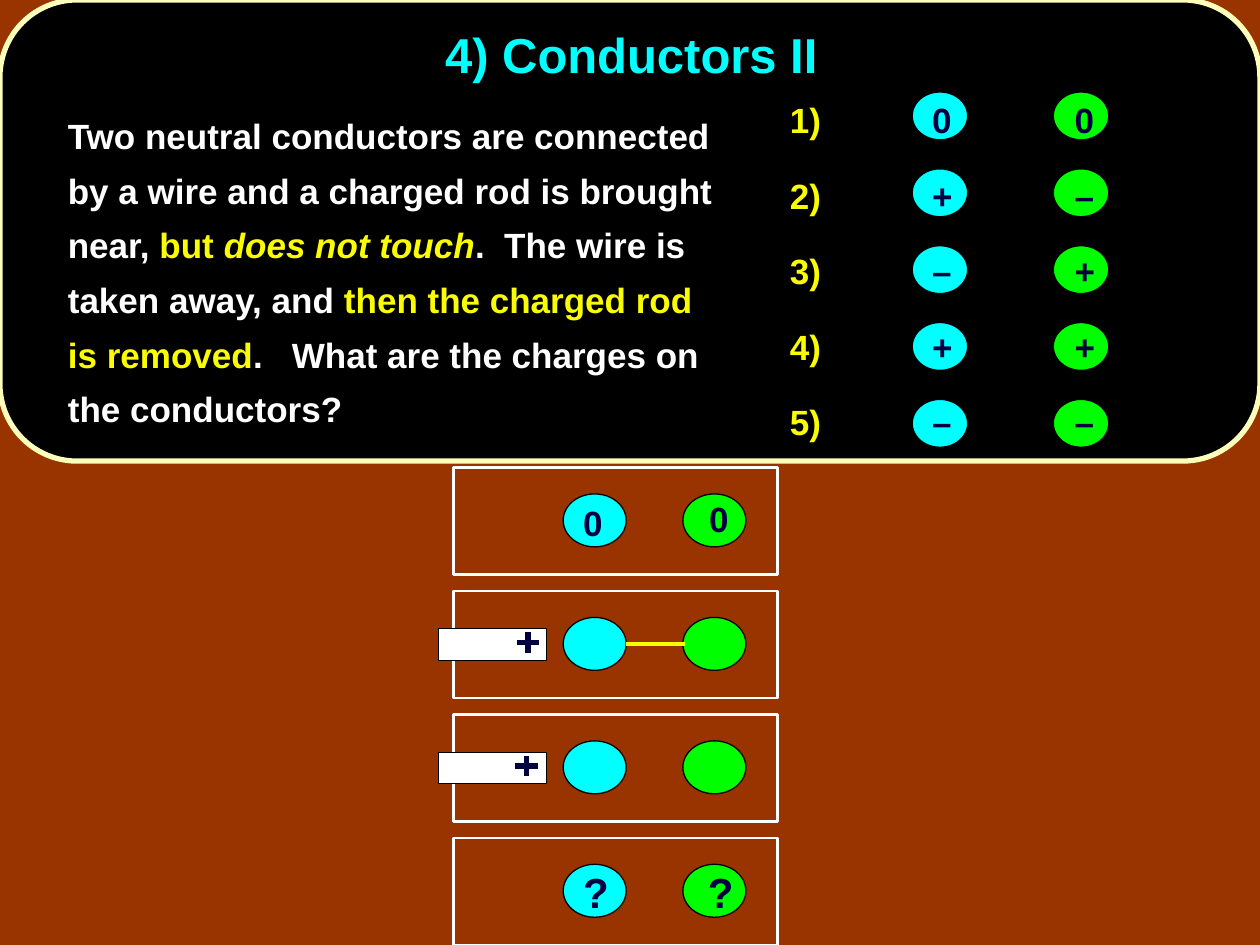
import pptx
import pptx.util
import pptx.dml.color
import pptx.enum.shapes
import pptx.enum.text
import pptx.oxml
from pptx.oxml.ns import qn
from lxml import etree

Inches = pptx.util.Inches
Pt = pptx.util.Pt
RGB = pptx.dml.color.RGBColor
SHAPE = pptx.enum.shapes.MSO_SHAPE
ALIGN = pptx.enum.text.PP_ALIGN
ANCHOR = pptx.enum.text.MSO_ANCHOR

BROWN = RGB(0x99, 0x33, 0x00)
BLACK = RGB(0x00, 0x00, 0x00)
WHITE = RGB(0xFF, 0xFF, 0xFF)
CREAM = RGB(0xFC, 0xFE, 0xB9)
YELLOW = RGB(0xFA, 0xFD, 0x00)
CYAN = RGB(0x00, 0xFF, 0xFF)
GREEN = RGB(0x00, 0xFF, 0x00)
NAVY = RGB(0x00, 0x00, 0x40)

TITLE = "4) Conductors II"
QUESTION = [
    ("Two neutral conductors are connected by a wire and a charged rod is brought near, ", WHITE, False),
    ("but ", YELLOW, False),
    ("does not touch", YELLOW, True),
    (".  The wire is taken away, and ", WHITE, False),
    ("then the charged rod is removed", YELLOW, False),
    (".   What are the charges on the conductors?", WHITE, False),
]
ANSWERS = [("0", "0"), ("+", "–"), ("–", "+"), ("+", "+"), ("–", "–")]
PANELS = 4
RODS = [(1, 4.19), (2, 4.18)]
LABELS = [
    ("0", 20, 4.53, 3.97, 0.36, 0.4),
    ("0", 20, 5.53, 3.94, 0.36, 0.4),
    ("?", 24, 4.53, 6.87, 0.4, 0.46),
    ("?", 24, 5.52, 6.87, 0.4, 0.46),
]

ANSWER_TOP, ANSWER_STEP = 0.73, 0.61
PANEL_TOP, PANEL_STEP = 3.71, 0.98


def add_shape(s, kind, x, y, w, h, fill, line, width):
    sp = s.shapes.add_shape(kind, Inches(x), Inches(y), Inches(w), Inches(h))
    sp.shadow.inherit = False
    if fill is None:
        sp.fill.background()
    else:
        sp.fill.solid()
        sp.fill.fore_color.rgb = fill
    sp.line.color.rgb = line
    sp.line.width = Pt(width)
    return sp


def add_pair(s, lefts, y, w, h):
    for x, color in zip(lefts, (CYAN, GREEN)):
        add_shape(s, SHAPE.OVAL, x, y, w, h, color, BLACK, 0.75)


def add_line(s, x1, y1, x2, y2, color, width):
    c = s.shapes.add_connector(pptx.enum.shapes.MSO_CONNECTOR.STRAIGHT,
                               Inches(x1), Inches(y1), Inches(x2), Inches(y2))
    c.line.color.rgb = color
    c.line.width = Pt(width)
    etree.SubElement(c._element.spPr, qn("a:effectLst"))


def add_text(s, x, y, w, h, wrap=False):
    tf = s.shapes.add_textbox(Inches(x), Inches(y), Inches(w), Inches(h)).text_frame
    tf.word_wrap = wrap
    return tf


def add_run(p, text, size, color, italic=False):
    r = p.add_run()
    r.text = text
    r.font.name = "Arial"
    r.font.size = Pt(size)
    r.font.bold = True
    r.font.italic = italic
    r.font.color.rgb = color


def add_tabs(p, stops):
    tabs = etree.SubElement(p._p.get_or_add_pPr(), qn("a:tabLst"))
    for stop in stops:
        etree.SubElement(tabs, qn("a:tab"), pos=str(Inches(stop)), algn="l")


def add_question(s):
    box = add_shape(s, SHAPE.ROUNDED_RECTANGLE, 0, 0, 10, 3.66, BLACK, CREAM, 3)
    box.adjustments[0] = 0.167
    p = add_text(s, 0, 0.76, 5.79, 2.78, wrap=True).paragraphs[0]
    p.line_spacing = 1.3
    p._p.get_or_add_pPr().set("marL", str(Inches(0.44)))
    for text, color, italic in QUESTION:
        add_run(p, text, 20, color, italic)
    tf = add_text(s, 1.02, 0, 7.98, 0.92, wrap=True)
    tf.vertical_anchor = ANCHOR.MIDDLE
    p = tf.paragraphs[0]
    p.alignment = ALIGN.CENTER
    p.line_spacing = 0.9
    add_run(p, TITLE, 28, CYAN)


def add_answers(s):
    for i in range(len(ANSWERS)):
        add_pair(s, (7.24, 8.36), ANSWER_TOP + i * ANSWER_STEP, 0.44, 0.38)
    tf = add_text(s, 6.17, 0.77, 2.63, 2.8)
    for i, (left, right) in enumerate(ANSWERS):
        p = tf.add_paragraph() if i else tf.paragraphs[0]
        p.line_spacing = 0.9
        p.space_before = Pt(21.6 if i else 0)
        add_tabs(p, (1.13, 2.26))
        add_run(p, f"{i + 1})\t", 20, YELLOW)
        add_run(p, f"{left}\t{right}", 20, NAVY)


def add_panels(s):
    for i in range(PANELS):
        y = PANEL_TOP + i * PANEL_STEP
        add_pair(s, (4.47, 5.42), y + 0.21, 0.5, 0.42)
        add_shape(s, SHAPE.RECTANGLE, 3.6, y, 2.57, 0.85, None, WHITE, 1.5)
    for i, x in RODS:
        y = PANEL_TOP + i * PANEL_STEP + 0.42
        add_shape(s, SHAPE.RECTANGLE, 3.48, y - 0.12, 0.86, 0.25, WHITE, BLACK, 0.75)
        add_line(s, x - 0.09, y - 0.01, x + 0.09, y - 0.01, NAVY, 3)
        add_line(s, x, y + 0.07, x, y - 0.09, NAVY, 3)
    add_line(s, 4.97, 5.11, 5.44, 5.11, YELLOW, 2.25)
    for text, size, x, y, w, h in LABELS:
        p = add_text(s, x, y, w, h).paragraphs[0]
        p.line_spacing = 0.9
        add_run(p, text, size, NAVY)


def main():
    prs = pptx.Presentation()
    prs.slide_width, prs.slide_height = Inches(10), Inches(7.5)
    s = prs.slides.add_slide(prs.slide_layouts[6])
    s.background.fill.solid()
    s.background.fill.fore_color.rgb = BROWN
    add_question(s)
    add_answers(s)
    add_panels(s)
    prs.save("out.pptx")


if __name__ == "__main__":
    main()
